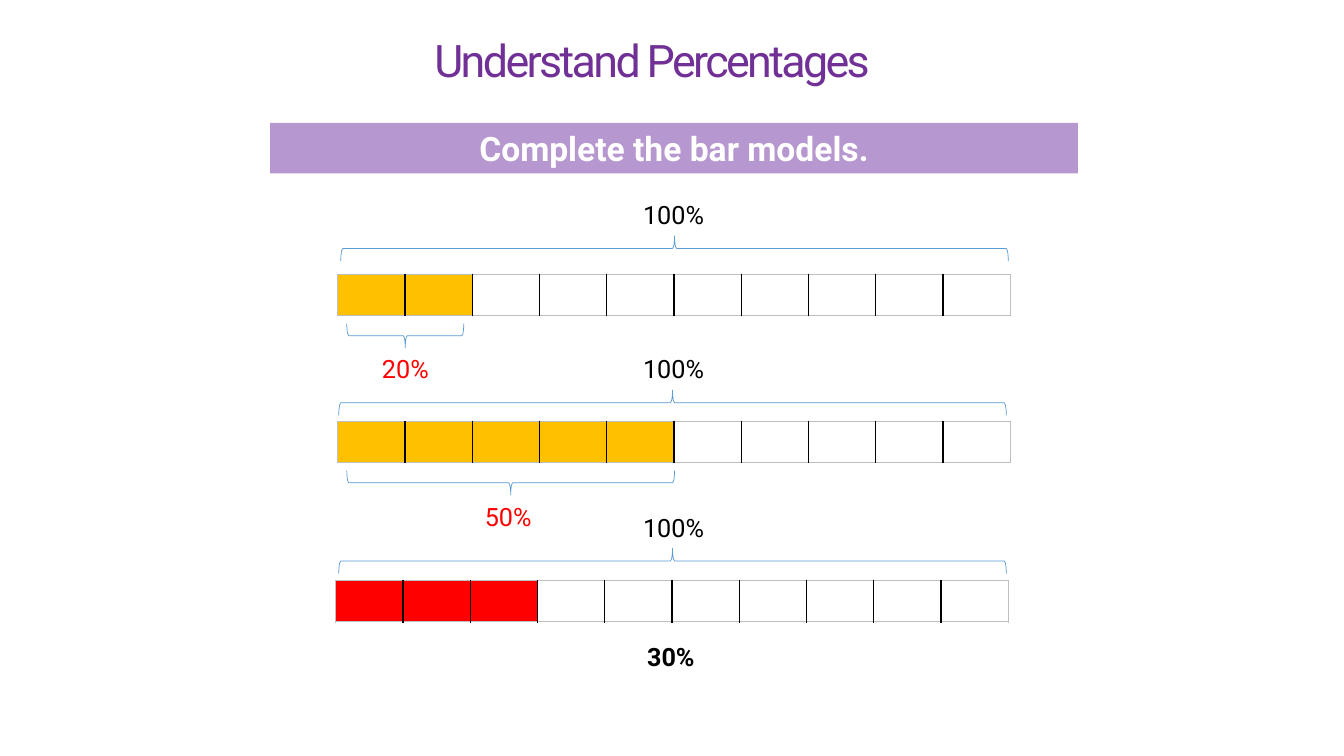
from lxml import etree
from pptx import Presentation
from pptx.dml.color import RGBColor
from pptx.enum.shapes import MSO_SHAPE
from pptx.enum.text import PP_ALIGN
from pptx.oxml.ns import qn
from pptx.util import Inches, Pt

COLORS = {
    "title": "703096", "banner": "7030A0", "brace": "5B9BD5",
    "gold": "FFC000", "red": "FF0000", "white": "FFFFFF",
    "black": "000000", "edge": "BFBFBF",
}
FONT = "Roboto"
PARTS = 10
PART_WIDTH, BAR_HEIGHT = 0.667, 0.41
WHOLE_LENGTH, WHOLE_DEPTH, SHADED_DEPTH = 6.62, 0.25, 0.24

BARS = [
    {"left": 3.35, "top": 2.72, "shaded": 2, "color": "gold",
     "whole_brace": (3.38, 2.34), "shaded_brace": (3.44, 3.21, 1.16)},
    {"left": 3.35, "top": 4.18, "shaded": 5, "color": "gold",
     "whole_brace": (3.36, 3.87), "shaded_brace": (3.44, 4.67, 3.25)},
    {"left": 3.33, "top": 5.76, "shaded": 3, "color": "red",
     "whole_brace": (3.36, 5.44), "shaded_brace": None},
]
LABELS = [
    ("100%", 6.28, 1.93, 0.85, "black", False),
    ("100%", 6.28, 3.46, 0.85, "black", False),
    ("100%", 6.28, 5.03, 0.85, "black", False),
    ("20%", 3.69, 3.46, 0.71, "red", False),
    ("50%", 4.71, 4.92, 0.71, "red", False),
    ("30%", 6.32, 6.31, 0.93, "black", True),
]


def rgb(name):
    return RGBColor.from_string(COLORS[name])


def write(shape, text, size, color, bold=False):
    shape.text_frame.text = text
    paragraph = shape.text_frame.paragraphs[0]
    font = paragraph.runs[0].font
    font.name, font.size, font.bold = FONT, Pt(size), bold
    font.color.rgb = rgb(color)
    return paragraph


def add_label(slide, text, left, top, width, color, bold, height=0.4, size=18):
    box = slide.shapes.add_textbox(Inches(left), Inches(top), Inches(width), Inches(height))
    box.text_frame.word_wrap = bold
    return write(box, text, size, color, bold)


def add_brace(slide, left, top, length, depth, rotation):
    shift = (length - depth) / 2
    brace = slide.shapes.add_shape(
        MSO_SHAPE.LEFT_BRACE, Inches(left + shift), Inches(top - shift),
        Inches(depth), Inches(length))
    brace.rotation = rotation
    brace.shadow.inherit = False
    brace.fill.background()
    brace.line.color.rgb = rgb("brace")
    brace.line.width = Pt(0.5)


def set_borders(cell, sides):
    properties = cell._tc.get_or_add_tcPr()
    for index, (side, color) in enumerate(sides.items()):
        line = etree.Element(qn(f"a:{side}"), w=str(Pt(1)))
        fill = etree.SubElement(line, qn("a:solidFill"))
        etree.SubElement(fill, qn("a:srgbClr"), val=COLORS[color])
        properties.insert(index, line)


def add_bar(slide, bar):
    table = slide.shapes.add_table(
        1, PARTS, Inches(bar["left"]), Inches(bar["top"]),
        Inches(PART_WIDTH * PARTS), Inches(BAR_HEIGHT)).table
    table.first_row = table.horz_banding = False
    table.rows[0].height = Inches(BAR_HEIGHT)
    for index in range(PARTS):
        table.columns[index].width = Inches(PART_WIDTH)
        cell = table.cell(0, index)
        cell.margin_top = cell.margin_bottom = 0
        cell.fill.solid()
        cell.fill.fore_color.rgb = rgb(bar["color"] if index < bar["shaded"] else "white")
        set_borders(cell, {
            "lnL": "edge" if index == 0 else "black",
            "lnR": "edge" if index == PARTS - 1 else "black",
            "lnT": "edge", "lnB": "edge",
        })


def add_banner(slide):
    banner = slide.shapes.add_shape(
        MSO_SHAPE.RECTANGLE, Inches(2.68), Inches(1.22), Inches(8.01), Inches(0.5))
    banner.shadow.inherit = False
    banner.line.fill.background()
    banner.fill.solid()
    banner.fill.fore_color.rgb = rgb("banner")
    color = banner._element.spPr.find(f"{qn('a:solidFill')}/{qn('a:srgbClr')}")
    etree.SubElement(color, qn("a:alpha"), val="50000")
    paragraph = write(banner, "Complete the bar models.", 24, "white", True)
    paragraph.alignment = PP_ALIGN.CENTER
    paragraph.line_spacing = Pt(28.8)
    paragraph.space_before = Pt(1)


def main():
    presentation = Presentation()
    presentation.slide_width, presentation.slide_height = Inches(13.33), Inches(7.5)
    slide = presentation.slides.add_slide(presentation.slide_layouts[6])

    title = add_label(slide, "Understand Percentages", 4.21, 0.28, 4.57,
                      "title", False, height=0.64, size=32)
    title.runs[0]._r.get_or_add_rPr().set("spc", "-190")
    add_banner(slide)
    for bar in BARS:
        add_bar(slide, bar)
        add_brace(slide, *bar["whole_brace"], WHOLE_LENGTH, WHOLE_DEPTH, 90)
        if bar["shaded_brace"]:
            add_brace(slide, *bar["shaded_brace"], SHADED_DEPTH, 270)
    for label in LABELS:
        add_label(slide, *label)

    presentation.save("out.pptx")


if __name__ == "__main__":
    main()
